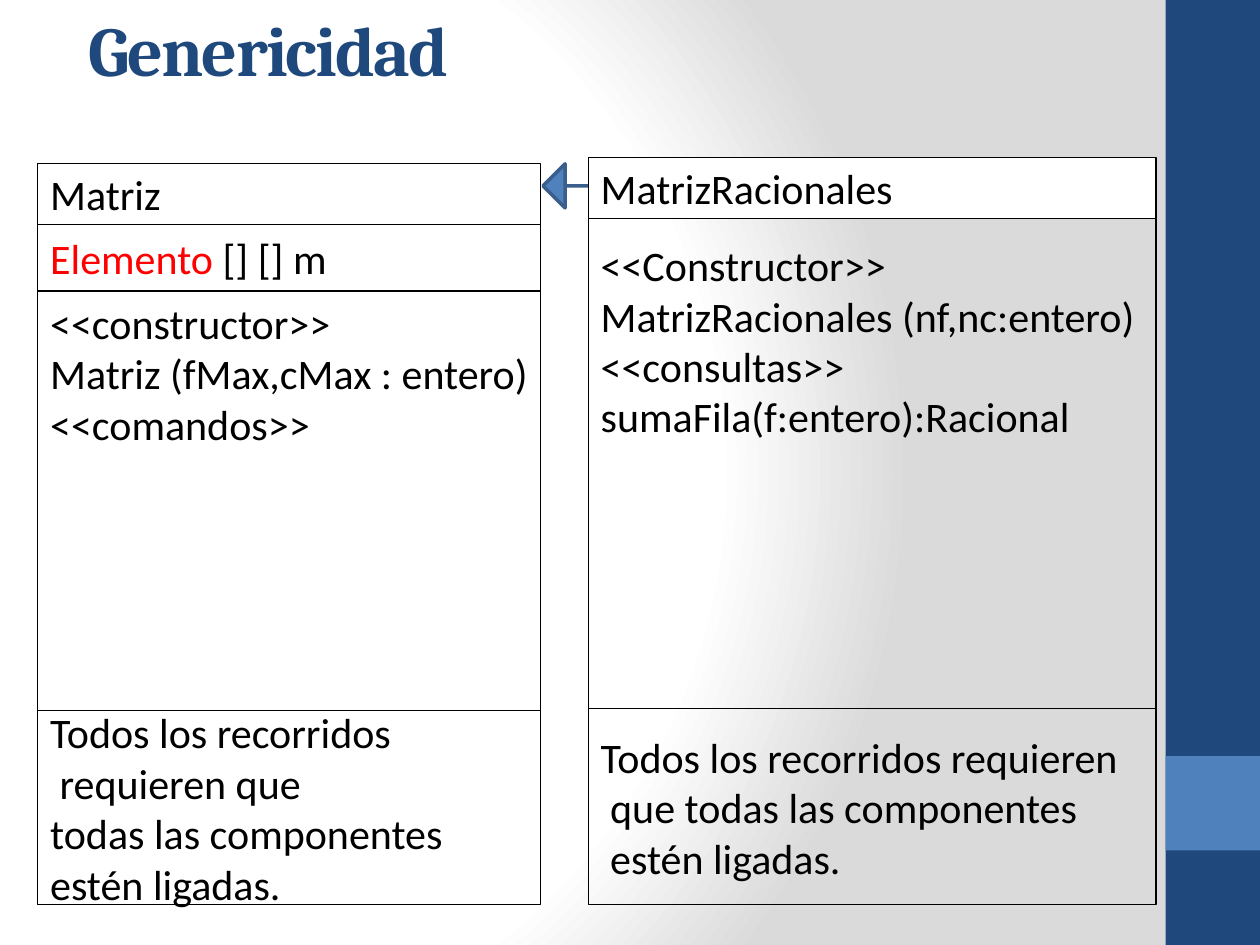
from itertools import pairwise

from lxml.etree import SubElement
from pptx import Presentation
from pptx.dml.color import RGBColor
from pptx.enum.shapes import MSO_SHAPE as Shape
from pptx.enum.text import MSO_ANCHOR as Anchor, PP_ALIGN as Align
from pptx.oxml.ns import qn
from pptx.util import Pt

NAVY = RGBColor(0x1F, 0x49, 0x7D)
BLUE = RGBColor(0x4F, 0x81, 0xBD)
ARROW_EDGE = RGBColor(0x3A, 0x5F, 0x8C)
BLACK = RGBColor(0, 0, 0)
RED = RGBColor(0xFF, 0, 0)
WHITE = RGBColor(0xFF, 0xFF, 0xFF)
GREY = RGBColor(0xDA, 0xDA, 0xDA)

MATRIX_ROWS = [
    {"lines": [[("Matriz", BLACK)]]},
    {"lines": [[("Elemento", RED), (" [] [] m", BLACK)]]},
    {"lines": ["<<constructor>>", "Matriz (fMax,cMax : entero)", "<<comandos>>"],
     "anchor": Anchor.TOP},
    {"lines": ["Todos los recorridos", " requieren que",
               "todas las componentes", "estén ligadas."]},
]
RATIONAL_ROWS = [
    {"lines": ["MatrizRacionales"], "fill": WHITE},
    {"lines": ["<<Constructor>>", "MatrizRacionales (nf,nc:entero)",
               "<<consultas>>", "sumaFila(f:entero):Racional"],
     "anchor": Anchor.TOP, "inset": 12},
    {"lines": ["Todos los recorridos requieren", " que todas las componentes",
               " estén ligadas."]},
]


def write(frame, lines, size=24, font="Calibri", color=BLACK, bold=False,
          spacing=0, anchor=Anchor.MIDDLE, inset=3.6, wrap=False):
    """Fill a text frame with lines, each a string or a list of (text, colour) runs."""
    frame.word_wrap = wrap
    frame.vertical_anchor = anchor
    frame.margin_top = Pt(inset)
    for index, line in enumerate(lines):
        paragraph = frame.add_paragraph() if index else frame.paragraphs[0]
        paragraph.alignment = Align.LEFT
        for text, tint in [(line, color)] if isinstance(line, str) else line:
            run = paragraph.add_run()
            run.text = text
            run.font.size, run.font.name, run.font.bold = Pt(size), font, bold
            run.font.color.rgb = tint
            if spacing:
                run.font._element.set("spc", str(spacing * 100))


def add_block(slide, kind, box, fill=None, edge=None, weight=0.75):
    """Add a preset shape in a box, with optional fill and outline."""
    block = slide.shapes.add_shape(kind, *map(Pt, box))
    block.shadow.inherit = False
    if fill is None:
        block.fill.background()
    else:
        block.fill.solid()
        block.fill.fore_color.rgb = fill
    if edge is None:
        block.line.fill.background()
    else:
        block.line.color.rgb = edge
        block.line.width = Pt(weight)
    return block


def paint_background(slide):
    """Give the slide a circular gradient from white to grey."""
    slide.background.fill.gradient()
    gradient = slide.element.find(".//" + qn("a:gradFill"))
    for child in list(gradient):
        gradient.remove(child)
    stops = SubElement(gradient, qn("a:gsLst"))
    for position, color in [(0, WHITE), (75, WHITE), (100, GREY)]:
        stop = SubElement(stops, qn("a:gs"), pos=str(position * 1000))
        SubElement(stop, qn("a:srgbClr"), val=str(color))
    circle = SubElement(gradient, qn("a:path"), path="circle")
    SubElement(circle, qn("a:fillToRect"), l="20000", t="50000", r="100000", b="50000")


def add_side_band(slide, left, top, width, height):
    """Draw the dark band with its lighter square near the bottom."""
    add_block(slide, Shape.RECTANGLE, (left, top, width, height), NAVY)
    add_block(slide, Shape.RECTANGLE, (left, top + 0.8 * height, width, width), BLUE)


def add_title(slide, left, top, width, height, text):
    """Place the slide title."""
    title = slide.shapes.add_textbox(*map(Pt, (left, top, width, height)))
    write(title.text_frame, [text], size=40, font="Cambria", color=NAVY, bold=True,
          spacing=-1, anchor=Anchor.TOP, wrap=True)


def add_inheritance(slide, left, top, width, height):
    """Draw the arrow from the subclass to its superclass."""
    arrow = add_block(slide, Shape.LEFT_ARROW, (left, top, width, height),
                      BLUE, ARROW_EDGE, 2)
    arrow.adjustments[0] = 0
    arrow.adjustments[1] = 0.5


def add_class(slide, left, width, edges, rows):
    """Stack the compartments of a class between successive edges."""
    for (top, bottom), row in zip(pairwise(edges), rows):
        style = dict(row)
        fill = style.pop("fill", None)
        compartment = add_block(slide, Shape.RECTANGLE,
                                (left, top, width, bottom - top), fill, BLACK)
        write(compartment.text_frame, **style)


def main():
    """Build and save the slide."""
    deck = Presentation()
    deck.slide_width, deck.slide_height = Pt(720), Pt(540)
    slide = deck.slides.add_slide(deck.slide_layouts[6])
    paint_background(slide)
    add_side_band(slide, 666, 0, 54, 540)
    add_title(slide, 43.2, 0, 600, 90, "Genericidad")
    add_class(slide, 21.6, 287.5, [93.6, 128.3, 166.3, 406, 517], MATRIX_ROWS)
    add_inheritance(slide, 310.3, 93.6, 51, 25.2)
    add_class(slide, 336.2, 324.4, [90, 125, 405, 517], RATIONAL_ROWS)
    deck.save("out.pptx")


if __name__ == "__main__":
    main()
